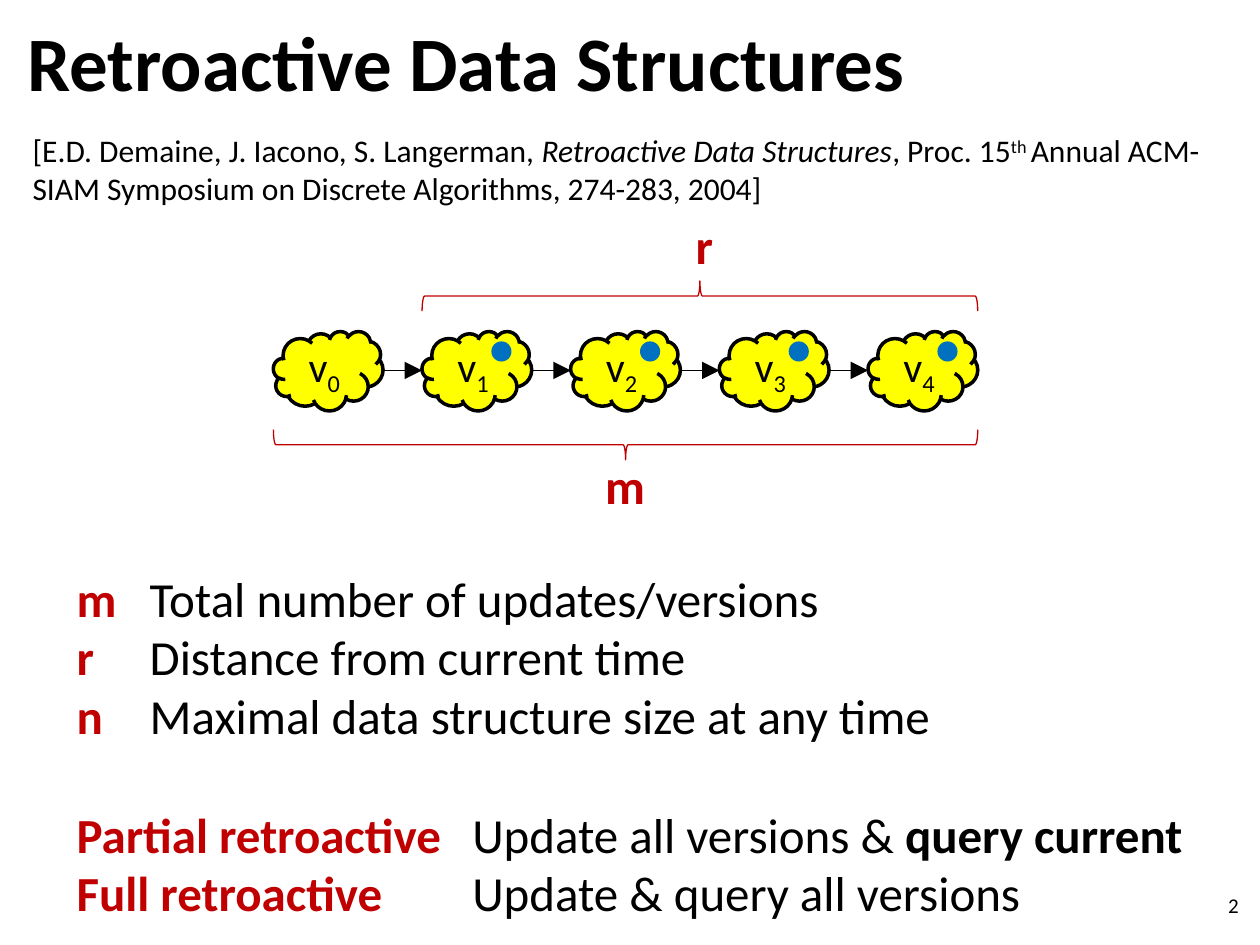
from dataclasses import dataclass
from typing import Optional

from lxml.etree import SubElement
from pptx import Presentation
from pptx.dml.color import RGBColor
from pptx.enum.shapes import MSO_CONNECTOR, MSO_SHAPE
from pptx.enum.text import MSO_ANCHOR, PP_ALIGN
from pptx.oxml.ns import qn
from pptx.util import Inches, Pt

BLACK, RED, YELLOW, BLUE = "000000", "C00000", "FFFF00", "0070C0"
VERSIONS = 5
CLOUD_LEFT, CLOUD_TOP, CLOUD_W, CLOUD_H = 2.17, 2.63, 0.87, 0.63
PITCH = 1.18
DOT = 0.16
BRACE_DEPTH = 0.24


@dataclass
class Run:
    text: str
    color: str = BLACK
    bold: bool = False
    italic: bool = False
    baseline: int = 0


@dataclass
class Para:
    runs: list[Run]
    tabs: tuple[float, ...] = ()
    before: float = 0


@dataclass
class Box:
    left: float
    top: float
    width: float
    height: float
    size: float
    paras: list[Para]
    align: PP_ALIGN = PP_ALIGN.LEFT
    anchor: MSO_ANCHOR = MSO_ANCHOR.TOP


@dataclass
class Brace:
    first: int
    top: float
    points_up: bool


def rgb(color: str) -> RGBColor:
    return RGBColor.from_string(color)


def fill_text(tf, paras: list[Para], size: float, align: PP_ALIGN) -> None:
    for i, para in enumerate(paras):
        p = tf.add_paragraph() if i else tf.paragraphs[0]
        if para.tabs:
            tab_list = SubElement(p._p.get_or_add_pPr(), qn("a:tabLst"))
            for pos in para.tabs:
                SubElement(tab_list, qn("a:tab"), pos=str(Inches(pos)), algn="l")
        p.alignment = align
        if para.before:
            p.space_before = Pt(para.before)
        p.font.size = Pt(size)
        p.font.name = "Calibri"
        for run in para.runs:
            r = p.add_run()
            r.text = run.text
            r.font.color.rgb = rgb(run.color)
            r.font.bold = run.bold
            r.font.italic = run.italic
            if run.baseline:
                r._r.get_or_add_rPr().set("baseline", str(run.baseline * 1000))


def add_text(slide, box: Box) -> None:
    s = slide.shapes.add_textbox(Inches(box.left), Inches(box.top),
                                 Inches(box.width), Inches(box.height))
    tf = s.text_frame
    tf.word_wrap = True
    tf.vertical_anchor = box.anchor
    fill_text(tf, box.paras, box.size, box.align)


def add_shape(slide, kind: MSO_SHAPE, left: float, top: float, width: float, height: float,
              fill: Optional[str] = None, line: Optional[str] = None, weight: float = 0.75):
    s = slide.shapes.add_shape(kind, Inches(left), Inches(top), Inches(width), Inches(height))
    s.shadow.inherit = False
    if fill:
        s.fill.solid()
        s.fill.fore_color.rgb = rgb(fill)
    else:
        s.fill.background()
    if line:
        s.line.color.rgb = rgb(line)
        s.line.width = Pt(weight)
    else:
        s.line.fill.background()
    return s


def add_version(slide, index: int) -> None:
    left = CLOUD_LEFT + index * PITCH
    s = add_shape(slide, MSO_SHAPE.CLOUD, left, CLOUD_TOP, CLOUD_W, CLOUD_H, YELLOW, BLACK, 2)
    tf = s.text_frame
    tf.margin_left = tf.margin_right = Inches(0)
    tf.vertical_anchor = MSO_ANCHOR.MIDDLE
    label = Para([Run("v"), Run(str(index), baseline=-25)])
    fill_text(tf, [label], 24, PP_ALIGN.CENTER)
    if index:
        add_shape(slide, MSO_SHAPE.OVAL, left + 0.55, CLOUD_TOP + 0.08, DOT, DOT, BLUE)


def add_arrow(slide, index: int) -> None:
    end = CLOUD_LEFT + index * PITCH
    y = Inches(2.94)
    s = slide.shapes.add_connector(MSO_CONNECTOR.STRAIGHT,
                                   Inches(end - PITCH + CLOUD_W), y, Inches(end), y)
    s.line.color.rgb = rgb(BLACK)
    s.line.width = Pt(0.75)
    SubElement(s.line._get_or_add_ln(), qn("a:tailEnd"), type="triangle", w="lg", len="lg")
    SubElement(s._element.spPr, qn("a:effectLst"))


def add_brace(slide, brace: Brace) -> None:
    length = (VERSIONS - 1 - brace.first) * PITCH + CLOUD_W
    center_x = CLOUD_LEFT + brace.first * PITCH + length / 2
    center_y = brace.top + BRACE_DEPTH / 2
    s = add_shape(slide, MSO_SHAPE.RIGHT_BRACE, center_x - BRACE_DEPTH / 2,
                  center_y - length / 2, BRACE_DEPTH, length, line=RED)
    s.rotation = 90
    if brace.points_up:
        s._element.spPr.find(qn("a:xfrm")).set("flipH", "1")


def definition(term: str, *meaning: Run, tabs: tuple[float, ...] = (0.58,),
               before: float = 0) -> Para:
    return Para([Run(term + "\t", RED, True), *meaning], tabs, before)


def main() -> None:
    prs = Presentation()
    prs.slide_width, prs.slide_height = Inches(10), Inches(7.5)
    slide = prs.slides.add_slide(prs.slide_layouts[6])

    wide_tabs = (3.14,)
    definitions = [
        definition("m", Run("Total number of updates/versions")),
        definition("r", Run("Distance from current time")),
        definition("n", Run("Maximal data structure size at any time")),
        definition("Partial retroactive", Run("Update all versions & "),
                   Run("query current", bold=True), tabs=wide_tabs, before=34),
        definition("Full retroactive", Run("Update & query all versions"), tabs=wide_tabs),
    ]
    citation = Para([
        Run("[E.D. Demaine, J. Iacono, S. Langerman, "),
        Run("Retroactive Data Structures", italic=True),
        Run(", Proc. 15"),
        Run("th ", baseline=30),
        Run("Annual ACM-SIAM Symposium on Discrete Algorithms, 274-283, 2004]"),
    ])
    boxes = [
        Box(0.12, -0.02, 9, 1.01, 44, [Para([Run("Retroactive Data Structures", bold=True)])],
            anchor=MSO_ANCHOR.MIDDLE),
        Box(0.16, 0.99, 9.72, 1.02, 18, [citation]),
        Box(5.08, 1.66, 1.02, 0.57, 28, [Para([Run("r", RED, True)])], PP_ALIGN.CENTER),
        Box(4.45, 3.57, 1.02, 0.57, 28, [Para([Run("m", RED, True)])], PP_ALIGN.CENTER),
        Box(0.51, 4.46, 9.21, 2.93, 28, definitions),
        Box(7.6, 6.98, 2.33, 0.4, 12, [Para([Run("2")])], PP_ALIGN.RIGHT, MSO_ANCHOR.MIDDLE),
    ]
    for box in boxes:
        add_text(slide, box)
    for index in range(VERSIONS):
        add_version(slide, index)
    for index in range(1, VERSIONS):
        add_arrow(slide, index)
    for brace in (Brace(0, 3.41, False), Brace(1, 2.23, True)):
        add_brace(slide, brace)

    prs.save("out.pptx")


if __name__ == "__main__":
    main()
